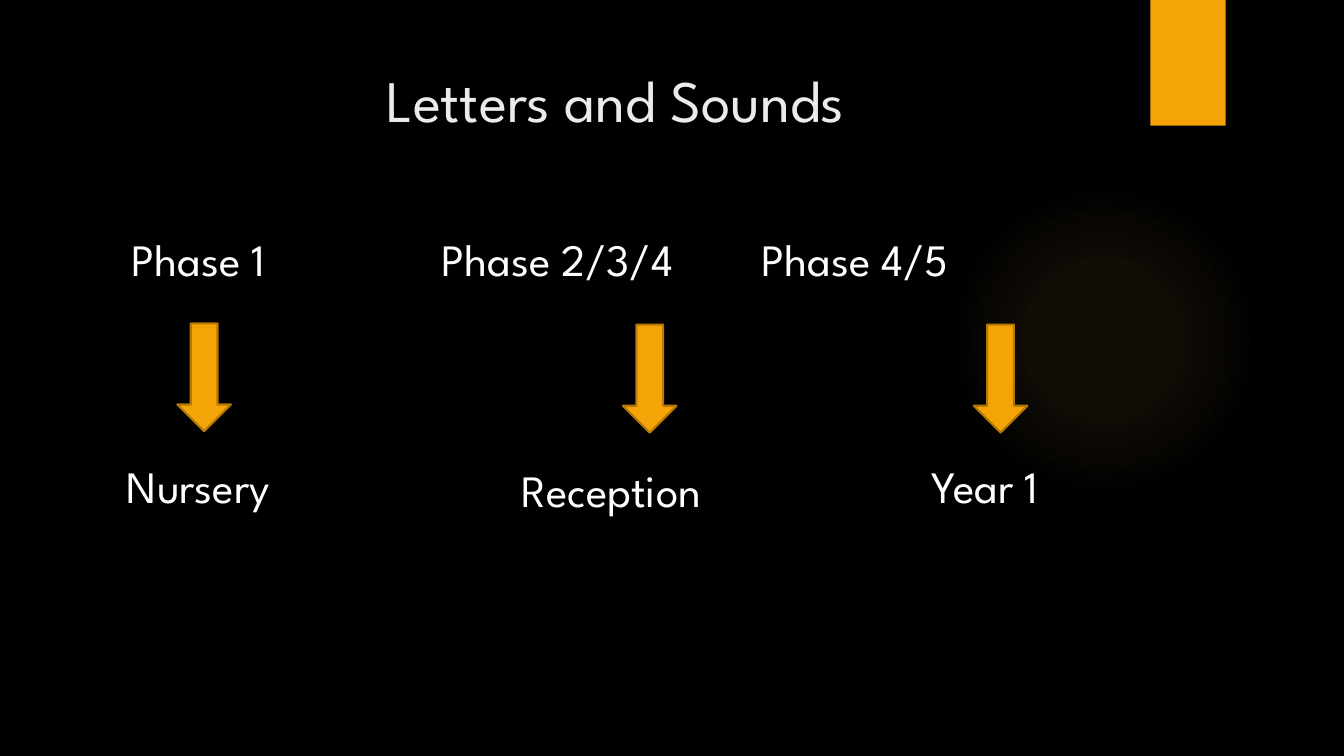
from dataclasses import dataclass

from lxml.etree import SubElement
from pptx import Presentation
from pptx.dml.color import RGBColor
from pptx.enum.shapes import MSO_SHAPE
from pptx.enum.text import MSO_ANCHOR, MSO_AUTO_SIZE, PP_ALIGN
from pptx.oxml import parse_xml
from pptx.oxml.ns import nsdecls, qn
from pptx.util import Cm, Pt


@dataclass(frozen=True)
class Theme:
    font: str = "League Spartan"
    background: RGBColor = RGBColor(0x00, 0x00, 0x00)
    title: RGBColor = RGBColor(0xEB, 0xEB, 0xEB)
    text: RGBColor = RGBColor(0xFF, 0xFF, 0xFF)
    accent: RGBColor = RGBColor(0xF5, 0xA4, 0x08)
    outline: RGBColor = RGBColor(0xB5, 0x79, 0x06)
    glow: RGBColor = RGBColor(0xFA, 0xC9, 0x6A)
    title_size: Pt = Pt(42)
    text_size: Pt = Pt(32)
    outline_width: Pt = Pt(1.5)


THEME = Theme()
PHASE_TOP = 5.72
FIRST_PHASE = ("Phase 1", 3.07, 7.0)
# Phase name, left and width, in centimetres
LATER_PHASES = [("Phase 2/3/4", 10.88, 7.0), ("Phase 4/5", 18.95, 7.0)]
# Class name, arrow left and top, label left, top and width, in centimetres
CLASSES = [
    ("Nursery", 4.47, 8.15, 2.95, 11.43, 4.83),
    ("Reception", 15.7, 8.18, 12.9, 11.53, 6.5),
    ("Year 1", 24.54, 8.18, 23.22, 11.43, 6.2),
]


def place(shape, left, top, width, height):
    shape.left, shape.top = Cm(left), Cm(top)
    shape.width, shape.height = Cm(width), Cm(height)


def style(para, size, color):
    para.space_before = Pt(0)
    para.font.name = THEME.font
    para.font.size = size
    para.font.color.rgb = color


def add_plain_shape(page, kind, left, top, width, height):
    """Add an accent-coloured shape without outline or shadow."""
    shape = page.shapes.add_shape(kind, Cm(left), Cm(top), Cm(width), Cm(height))
    shape.shadow.inherit = False
    shape.fill.solid()
    shape.fill.fore_color.rgb = THEME.accent
    shape.line.fill.background()
    return shape


def add_glow(page):
    """Add the faint round light that fades out to transparent."""
    glow = add_plain_shape(page, MSO_SHAPE.OVAL, 23.9, 4.65, 7.82, 7.82)
    stops = "".join(
        f'<a:gs pos="{position}000"><a:srgbClr val="{THEME.glow}">'
        f'<a:alpha val="{opacity}000"/></a:srgbClr></a:gs>'
        for position, opacity in [(0, 7), (36, 6), (69, 0)]
    )
    gradient = parse_xml(
        f'<a:gradFill {nsdecls("a")}><a:gsLst>{stops}</a:gsLst><a:path path="circle">'
        '<a:fillToRect l="50000" t="50000" r="50000" b="50000"/></a:path></a:gradFill>'
    )
    properties = glow.element.spPr
    properties.replace(properties.find(qn("a:solidFill")), gradient)
    return glow


def add_backdrop(page):
    page.background.fill.solid()
    page.background.fill.fore_color.rgb = THEME.background
    corner_tab = add_plain_shape(page, MSO_SHAPE.RECTANGLE, 28.99, 0, 1.9, 3.17)
    for shape in (add_glow(page), corner_tab):
        page.shapes.title.element.addprevious(shape.element)


def fill_placeholder(box, text, alignment):
    frame = box.text_frame
    frame.text = text
    frame.word_wrap = True
    frame.auto_size = MSO_AUTO_SIZE.NONE
    frame.vertical_anchor = MSO_ANCHOR.TOP
    para = frame.paragraphs[0]
    para.alignment = alignment
    return para


def add_title(page, text):
    title = page.shapes.title
    place(title, 2.44, 1.47, 26.14, 3.89)
    para = fill_placeholder(title, text, PP_ALIGN.CENTER)
    style(para, THEME.title_size, THEME.title)


def add_body(page, text, left, top, width):
    body = page.placeholders[1]
    place(body, left, top, width, 1.62)
    para = fill_placeholder(body, text, PP_ALIGN.LEFT)
    properties = para._p.get_or_add_pPr()
    properties.set("marL", "0")
    properties.set("indent", "0")
    SubElement(properties, qn("a:buNone"))
    style(para, THEME.text_size, THEME.text)


def add_arrow(page, left, top):
    arrow = add_plain_shape(page, MSO_SHAPE.DOWN_ARROW, left, top, 1.35, 2.72)
    arrow.line.color.rgb = THEME.outline
    arrow.line.width = THEME.outline_width


def add_label(page, text, left, top, width):
    box = page.shapes.add_textbox(Cm(left), Cm(top), Cm(width), Cm(1.62))
    frame = box.text_frame
    frame.word_wrap = True
    frame.auto_size = MSO_AUTO_SIZE.SHAPE_TO_FIT_TEXT
    frame.text = text
    style(frame.paragraphs[0], THEME.text_size, THEME.text)


def add_phases(page):
    name, left, width = FIRST_PHASE
    add_body(page, name, left, PHASE_TOP, width)
    for name, left, width in LATER_PHASES:
        add_label(page, name, left, PHASE_TOP, width)


def main():
    deck = Presentation()
    deck.slide_width, deck.slide_height = Cm(33.87), Cm(19.05)
    page = deck.slides.add_slide(deck.slide_layouts[1])
    add_backdrop(page)
    add_title(page, "Letters and Sounds")
    add_phases(page)
    for name, arrow_left, arrow_top, left, top, width in CLASSES:
        add_arrow(page, arrow_left, arrow_top)
        add_label(page, name, left, top, width)
    deck.save("out.pptx")


if __name__ == "__main__":
    main()
